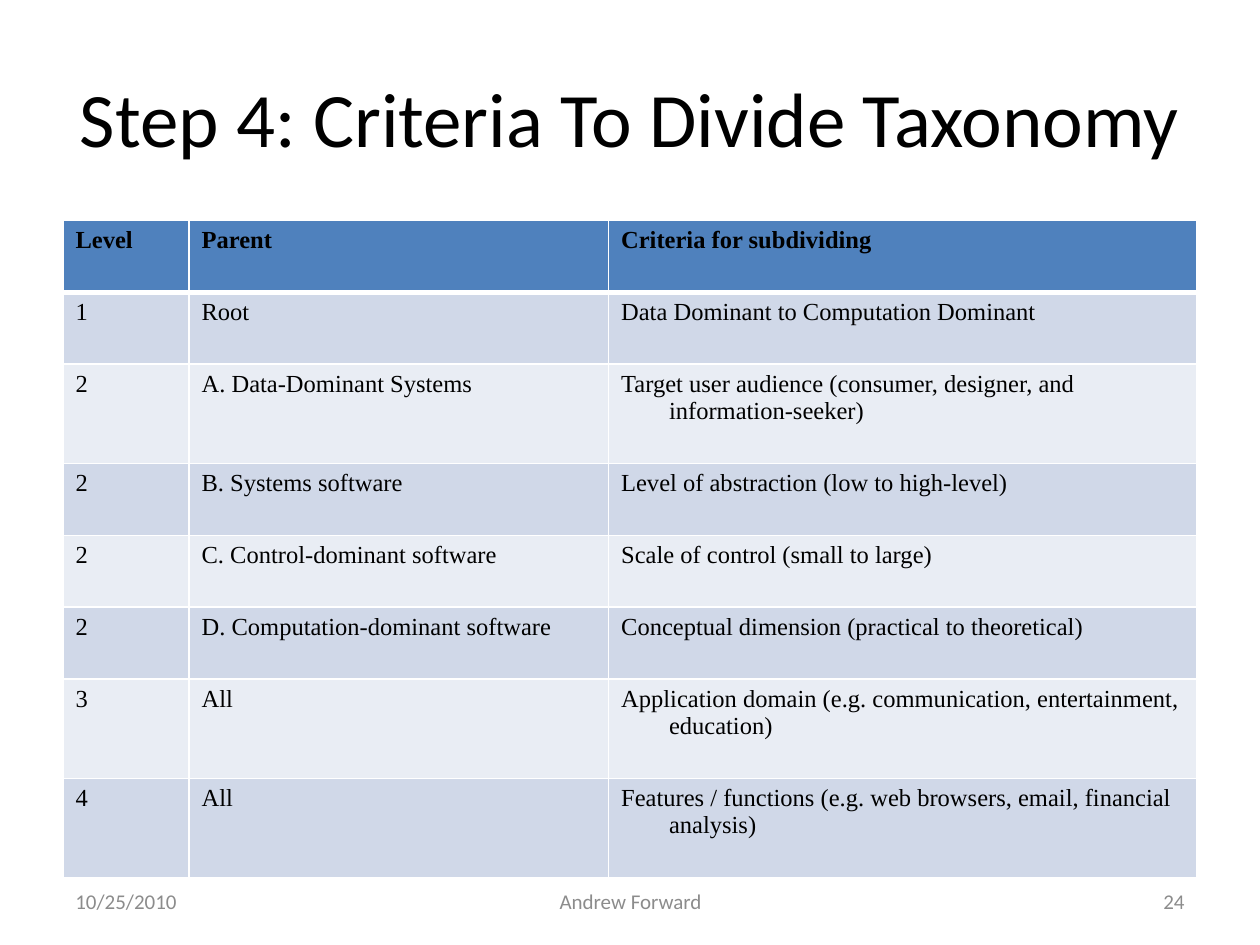
"""Build the slide listing the criteria that divide the taxonomy."""
from lxml import etree
from pptx import Presentation
from pptx.dml.color import RGBColor
from pptx.enum import text as t
from pptx.oxml import ns
from pptx.util import Inches, Pt

TITLE = "Step 4: Criteria To Divide Taxonomy"
ROWS = [
    ("Level", "Parent", "Criteria for subdividing"),
    ("1", "Root", "Data Dominant to Computation Dominant"),
    ("2", "A. Data-Dominant Systems",
     "Target user audience (consumer, designer, and information-seeker)"),
    ("2", "B. Systems software", "Level of abstraction (low to high-level)"),
    ("2", "C. Control-dominant software", "Scale of control (small to large)"),
    ("2", "D. Computation-dominant software",
     "Conceptual dimension (practical to theoretical)"),
    ("3", "All",
     "Application domain (e.g. communication, entertainment, education)"),
    ("4", "All",
     "Features / functions (e.g. web browsers, email, financial analysis)"),
]
WIDTHS = (1, 3.33, 4.67)
SHORT, TALL = 0.57, 0.79
WRAP = 60
INDENT = 0.38
FOOTER = [
    ("10/25/2010", 0.5, 2.33, t.PP_ALIGN.LEFT),
    ("Andrew Forward", 3.42, 3.17, t.PP_ALIGN.CENTER),
    ("24", 7.17, 2.33, t.PP_ALIGN.RIGHT),
]

BLACK = RGBColor(0x00, 0x00, 0x00)
WHITE = RGBColor(0xFF, 0xFF, 0xFF)
GRAY = RGBColor(0x8C, 0x8C, 0x8C)
HEAD = RGBColor(0x4F, 0x81, 0xBD)
BANDS = (RGBColor(0xE9, 0xED, 0xF4), RGBColor(0xD0, 0xD8, 0xE8))


def style(para, name, size, color, bold=False):
    font = para.font
    font.name, font.size, font.bold = name, Pt(size), bold
    font.color.rgb = color


def edge(cell, side, width):
    props = cell._tc.get_or_add_tcPr()
    line = etree.SubElement(props, ns.qn(f"a:ln{side}"), w=str(Pt(width)))
    fill = etree.SubElement(line, ns.qn("a:solidFill"))
    etree.SubElement(fill, ns.qn("a:srgbClr"), val=str(WHITE))


def add_title(slide):
    title = slide.shapes.title
    title.left, title.top = Inches(0.5), Inches(0.3)
    title.width, title.height = Inches(9), Inches(1.25)
    frame = title.text_frame
    frame.text = TITLE
    frame.vertical_anchor = t.MSO_ANCHOR.MIDDLE
    para = frame.paragraphs[0]
    para.alignment = t.PP_ALIGN.CENTER
    style(para, "Calibri", 44, BLACK)


def fill_cell(cell, words, row):
    for side in "LRTB":
        heavy = (row == 0 and side == "B") or (row == 1 and side == "T")
        edge(cell, side, 3 if heavy else 1)
    cell.fill.solid()
    cell.fill.fore_color.rgb = BANDS[row % 2] if row else HEAD
    cell.text = words
    para = cell.text_frame.paragraphs[0]
    style(para, "Times New Roman", 14, BLACK, row == 0)
    props = para._p.get_or_add_pPr()
    props.set("marL", str(Inches(INDENT)))
    props.set("indent", str(-Inches(INDENT)))


def add_grid(slide):
    highs = [TALL if len(row[-1]) > WRAP else SHORT for row in ROWS]
    grid = slide.shapes.add_table(
        len(ROWS), len(WIDTHS), Inches(0.5), Inches(1.75),
        Inches(sum(WIDTHS)), Inches(sum(highs))).table
    for col, wide in zip(grid.columns, WIDTHS):
        col.width = Inches(wide)
    for r, (row, high) in enumerate(zip(ROWS, highs)):
        grid.rows[r].height = Inches(high)
        for c, words in enumerate(row):
            fill_cell(grid.cell(r, c), words, r)


def add_footer(slide):
    for words, left, wide, align in FOOTER:
        box = slide.shapes.add_textbox(
            Inches(left), Inches(6.95), Inches(wide), Inches(0.4))
        frame = box.text_frame
        frame.word_wrap = True
        frame.vertical_anchor = t.MSO_ANCHOR.MIDDLE
        frame.text = words
        para = frame.paragraphs[0]
        para.alignment = align
        style(para, "Calibri", 12, GRAY)


def main():
    deck = Presentation()
    deck.slide_width, deck.slide_height = Inches(10), Inches(7.5)
    slide = deck.slides.add_slide(deck.slide_layouts[5])
    add_title(slide)
    add_grid(slide)
    add_footer(slide)
    deck.save("out.pptx")


if __name__ == "__main__":
    main()
